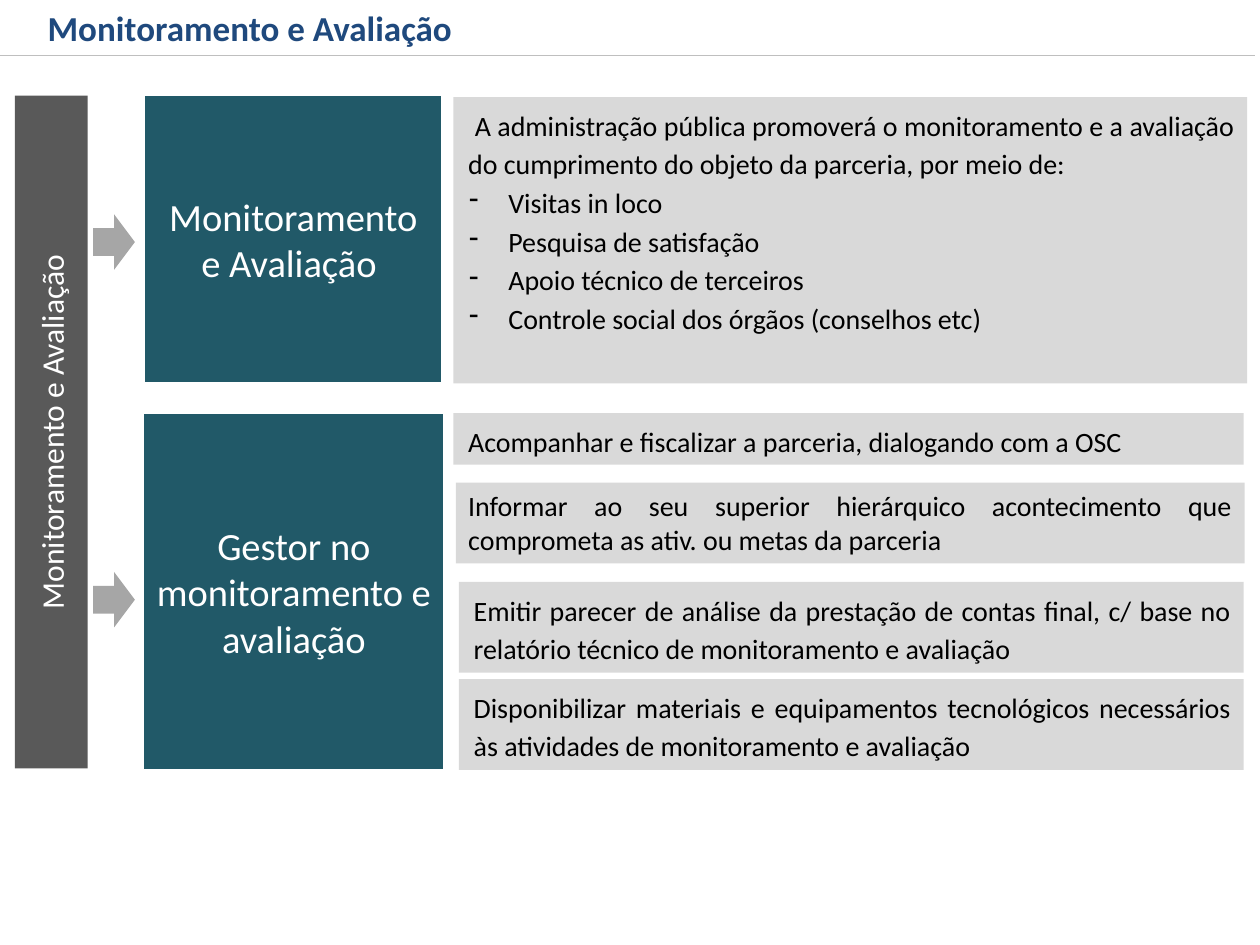
from dataclasses import dataclass

from lxml.etree import SubElement
from pptx import Presentation
from pptx.dml.color import RGBColor
from pptx.enum.shapes import MSO_CONNECTOR as Connector, MSO_SHAPE as Preset
from pptx.enum.text import MSO_ANCHOR as Anchor, PP_ALIGN as Align
from pptx.oxml.ns import qn
from pptx.util import Cm, Pt

TEAL, DARK, PALE, ARROW = "215968", "595959", "D9D9D9", "A6A6A6"
WHITE, BLACK, NAVY, RULE = "FFFFFF", "000000", "1F497D", "BFBFBF"


@dataclass
class Area:
    """Position and size in centimetres."""
    left: float
    top: float
    width: float
    height: float

    def lengths(self) -> list:
        return [Cm(v) for v in (self.left, self.top, self.width, self.height)]


@dataclass
class Panel:
    area: Area
    text: str
    bullets: tuple = ()
    spacing: float = 1.15
    indent: float = 0.05


TOPICS = [
    (Area(2.92, 1.93, 5.99, 5.79), "Monitoramento e Avaliação "),
    (Area(2.9, 8.33, 6.05, 7.19), "Gestor no monitoramento e avaliação"),
]
ARROW_TOPS = (4.32, 11.53)
PANELS = [
    Panel(Area(9.14, 1.96, 16, 5.77),
          " A administração pública promoverá o monitoramento e a avaliação "
          "do cumprimento do objeto da parceria, por meio de:",
          bullets=("Visitas in loco", "Pesquisa de satisfação",
                   "Apoio técnico de terceiros",
                   "Controle social dos órgãos (conselhos etc)")),
    Panel(Area(9.14, 8.33, 15.93, 1.04),
          "Acompanhar e fiscalizar a parceria, dialogando com a OSC"),
    Panel(Area(9.19, 9.73, 15.9, 1.63),
          "Informar ao seu superior hierárquico acontecimento que "
          "comprometa as ativ. ou metas da parceria", spacing=1, indent=0),
    Panel(Area(9.25, 11.73, 15.82, 1.83),
          "Emitir parecer de análise da prestação de contas final, c/ base no "
          "relatório técnico de monitoramento e avaliação"),
    Panel(Area(9.25, 13.69, 15.82, 1.83),
          "Disponibilizar materiais e equipamentos tecnológicos necessários "
          "às atividades de monitoramento e avaliação"),
]


def colour(code: str) -> RGBColor:
    return RGBColor.from_string(code)


def write(para, text: str, *, size=16, ink=BLACK, bold=False,
          align=Align.JUSTIFY, spacing=1.0, indent=0.0, hanging=0.0, bullet=""):
    para.alignment = align
    para.line_spacing = spacing
    props = para._p.get_or_add_pPr()
    props.set("marL", str(Cm(indent)))
    props.set("indent", str(Cm(-hanging)))
    if bullet:
        SubElement(props, qn("a:buChar")).set("char", bullet)
    span = para.add_run()
    span.text = text
    span.font.name = "Calibri"
    span.font.size = Pt(size)
    span.font.bold = bold
    span.font.color.rgb = colour(ink)


def add_block(slide, area: Area, fill: str, *, preset=Preset.RECTANGLE,
              outline="", anchor=Anchor.MIDDLE):
    block = slide.shapes.add_shape(preset, *area.lengths())
    block.shadow.inherit = False
    block.fill.solid()
    block.fill.fore_color.rgb = colour(fill)
    if outline:
        block.line.color.rgb = colour(outline)
        block.line.width = Pt(0.75)
    else:
        block.line.fill.background()
    block.text_frame.word_wrap = True
    block.text_frame.vertical_anchor = anchor
    return block


def add_panel(slide, panel: Panel) -> None:
    frame = add_block(slide, panel.area, PALE, anchor=Anchor.TOP).text_frame
    write(frame.paragraphs[0], panel.text, spacing=panel.spacing,
          indent=panel.indent)
    for item in panel.bullets:
        write(frame.add_paragraph(), item, spacing=panel.spacing,
              indent=0.86, hanging=0.79, bullet="-")


def add_header(slide) -> None:
    rule = slide.shapes.add_connector(
        Connector.STRAIGHT, Cm(-0.1), Cm(1.12), Cm(25.3), Cm(1.12))
    rule.line.color.rgb = colour(RULE)
    rule.line.width = Pt(0.75)
    SubElement(rule._element.spPr, qn("a:effectLst"))
    box = slide.shapes.add_textbox(*Area(0.71, 0, 24.38, 1.12).lengths())
    box.text_frame.word_wrap = True
    write(box.text_frame.paragraphs[0], "Monitoramento e Avaliação",
          size=20, ink=NAVY, bold=True, align=Align.LEFT)


def add_side_bar(slide) -> None:
    frame = add_block(slide, Area(0.3, 1.93, 1.47, 13.56), DARK).text_frame
    frame._txBody.bodyPr.set("vert", "vert270")
    write(frame.paragraphs[0], "Monitoramento e Avaliação",
          size=18, ink=WHITE, align=Align.CENTER)


def main() -> None:
    deck = Presentation()
    deck.slide_width, deck.slide_height = Cm(25.4), Cm(19.05)
    slide = deck.slides.add_slide(deck.slide_layouts[6])

    # Title, rule and vertical bar
    add_header(slide)
    add_side_bar(slide)

    # Topics, each with an arrow from the bar
    for (area, text), top in zip(TOPICS, ARROW_TOPS):
        topic = add_block(slide, area, TEAL, outline=WHITE)
        write(topic.text_frame.paragraphs[0], text,
              size=22, ink=WHITE, align=Align.CENTER)
        add_block(slide, Area(1.88, top, 0.84, 1.12), ARROW,
                  preset=Preset.RIGHT_ARROW)

    # Details to the right of the topics
    for panel in PANELS:
        add_panel(slide, panel)

    deck.save("out.pptx")


if __name__ == "__main__":
    main()
